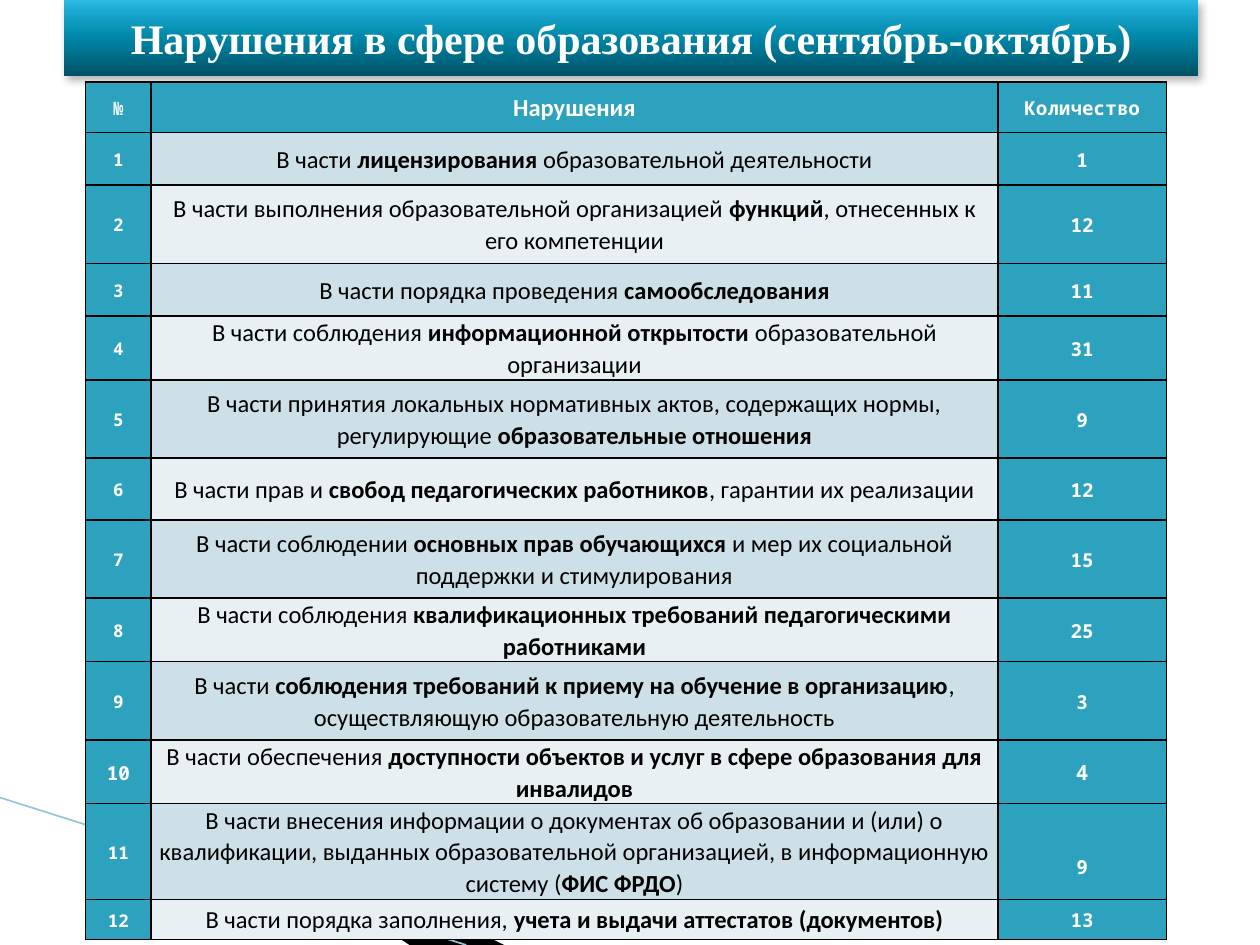
"""Build a slide with a table of violations in education for September and October."""
from lxml.etree import SubElement
from pptx import Presentation
from pptx.dml.color import RGBColor
from pptx.enum.shapes import MSO_CONNECTOR
from pptx.enum.text import MSO_ANCHOR, MSO_AUTO_SIZE, PP_ALIGN
from pptx.oxml.ns import qn
from pptx.util import Inches, Pt

TITLE = "Нарушения в сфере образования (сентябрь-октябрь)"
HEADERS = ["№", "Нарушения", "Количество"]
VIOLATIONS = [
    ("В части *лицензирования* образовательной деятельности", 1, 0.42),
    ("В части выполнения образовательной организацией *функций*, отнесенных к его компетенции", 12, 0.62),
    ("В части порядка проведения *самообследования*", 11, 0.42),
    ("В части соблюдения *информационной открытости *образовательной организации", 31, 0.5),
    ("В части принятия локальных нормативных актов, содержащих нормы, регулирующие "
     "*образовательные отношения*", 9, 0.62),
    ("В части прав и *свобод педагогических работников*, гарантии их реализации", 12, 0.49),
    ("В части соблюдении *основных прав обучающихся *и мер их социальной поддержки и стимулирования", 15, 0.62),
    ("В части соблюдения *квалификационных требований педагогическими работниками*", 25, 0.5),
    ("В части *соблюдения требований к приему на обучение в организацию*, "
     "осуществляющую образовательную деятельность", 3, 0.62),
    ("В части обеспечения *доступности объектов и услуг в сфере образования для инвалидов*", 4, 0.5),
    ("В части внесения информации о документах об образовании и (или) о квалификации, выданных "
     "образовательной организацией, в информационную систему (*ФИС ФРДО*)", 9, 0.76),
    ("В части порядка заполнения, *учета и выдачи аттестатов (документов)*", 13, 0.32),
]
HEADER_HEIGHT = 0.4
COLUMN_WIDTHS = [0.52, 6.72, 1.34]
NUMBER_SIZES = {10: 11}
COUNT_SIZES = {10: 12}
COUNT_TOP_MARGINS = {11: 0.23}
WAVES = [
    ([(0.55, 6.51), (5.95, 7.5), (4.56, 7.5), (0.55, 6.5)], "A0CBDC", 40),
    ([(0.53, 6.49), (4.57, 7.5), (3.72, 7.5), (0.54, 6.5)], "000000", 100),
]
THEME = {
    "title_font": "Times New Roman", "body_font": "Calibri", "mono_font": "Noto Sans Mono",
    "title_size": 24, "body_size": 14, "count_size": 11, "number_size": 10, "sign_size": 10.5,
    "white": "FFFFFF", "black": "000000", "accent": "2DA2BF", "bands": ["CDE0E8", "E8F0F4"],
    "wave_line": "97C5D8",
    "title_gradient": [(0, "005367"), (50, "0086A7"), (70, "0E9ABE"), (100, "2CB9E3")],
}


def add_color(parent, color, alpha=100):
    element = SubElement(parent, qn("a:srgbClr"), val=color)
    if alpha < 100:
        SubElement(element, qn("a:alpha"), val=str(alpha * 1000))


def write_text(frame, text, *, font, size, color, bold=True, spacing=None):
    """Write one centred paragraph, where asterisks enclose bold words."""
    paragraph = frame.paragraphs[0]
    paragraph.alignment = PP_ALIGN.CENTER
    if spacing:
        paragraph.line_spacing = spacing
    for index, part in enumerate(text.split("*")):
        if part:
            run = paragraph.add_run()
            run.text = part
            run.font.name = font
            run.font.size = Pt(size)
            run.font.bold = bold or index % 2 == 1
            run.font.color.rgb = RGBColor.from_string(color)


def add_waves(slide):
    for points, color, alpha in WAVES:
        builder = slide.shapes.build_freeform(*points[0], scale=Inches(1))
        builder.add_line_segments(points[1:], close=True)
        wave = builder.convert_to_shape()
        wave.shadow.inherit = False
        wave.line.fill.background()
        wave.fill.solid()
        wave.fill.fore_color.rgb = RGBColor.from_string(color)
        if alpha < 100:
            color_element = wave.fill._xPr.find(".//" + qn("a:srgbClr"))
            SubElement(color_element, qn("a:alpha"), val=str(alpha * 1000))
    line = slide.shapes.add_connector(
        MSO_CONNECTOR.STRAIGHT, Inches(0), Inches(6.33), Inches(3.7), Inches(7.5))
    line.line.color.rgb = RGBColor.from_string(THEME["wave_line"])
    line.line.width = Pt(0.95)
    SubElement(line._element.spPr, qn("a:effectLst"))


def add_title(slide):
    title = slide.shapes.title
    title.left, title.top, title.width, title.height = map(Inches, (0.51, 0, 9, 0.6))
    properties = title._element.spPr
    gradient = SubElement(properties, qn("a:gradFill"), rotWithShape="1")
    stops = SubElement(gradient, qn("a:gsLst"))
    for position, color in THEME["title_gradient"]:
        add_color(SubElement(stops, qn("a:gs"), pos=str(position * 1000)), color)
    SubElement(gradient, qn("a:lin"), ang=str(270 * 60000), scaled="0")
    effects = SubElement(properties, qn("a:effectLst"))
    shadow = SubElement(effects, qn("a:outerShdw"), blurRad=str(Pt(4.5)), dist=str(Pt(2.6)),
                        dir=str(53 * 60000), algn="tl", rotWithShape="0")
    add_color(shadow, THEME["black"], 30)
    frame = title.text_frame
    frame.word_wrap = True
    frame.auto_size = MSO_AUTO_SIZE.NONE
    frame.vertical_anchor = MSO_ANCHOR.MIDDLE
    write_text(frame, TITLE, font=THEME["title_font"], size=THEME["title_size"], color=THEME["white"])


def fill_cell(cell, text, *, fill, top_margin=0, **text_format):
    cell.vertical_anchor = MSO_ANCHOR.MIDDLE
    cell.margin_left = cell.margin_right = Inches(0.04)
    cell.margin_top, cell.margin_bottom = Inches(top_margin), 0
    write_text(cell.text_frame, text, spacing=1.07, **text_format)
    properties = cell._tc.get_or_add_tcPr()
    for side in ("lnL", "lnR", "lnT", "lnB"):
        border = SubElement(properties, qn("a:" + side), w=str(Pt(1)))
        add_color(SubElement(border, qn("a:solidFill")), THEME["black"])
    cell.fill.solid()
    cell.fill.fore_color.rgb = RGBColor.from_string(fill)


def add_violations_table(slide):
    heights = [HEADER_HEIGHT] + [height for _, _, height in VIOLATIONS]
    table = slide.shapes.add_table(
        len(heights), len(COLUMN_WIDTHS), Inches(0.68), Inches(0.65),
        Inches(sum(COLUMN_WIDTHS)), Inches(sum(heights))).table
    for column, width in zip(table.columns, COLUMN_WIDTHS):
        column.width = Inches(width)
    for row, height in zip(table.rows, heights):
        row.height = Inches(height)

    mono = {"font": THEME["mono_font"], "color": THEME["white"], "fill": THEME["accent"]}
    header_formats = [
        {**mono, "size": THEME["sign_size"]},
        {**mono, "size": THEME["body_size"], "font": THEME["body_font"]},
        {**mono, "size": THEME["count_size"]},
    ]
    for column, (header, header_format) in enumerate(zip(HEADERS, header_formats)):
        fill_cell(table.cell(0, column), header, **header_format)
    for number, (violation, count, _) in enumerate(VIOLATIONS, start=1):
        fill_cell(table.cell(number, 0), str(number),
                  size=NUMBER_SIZES.get(number, THEME["number_size"]), **mono)
        fill_cell(table.cell(number, 1), violation, font=THEME["body_font"], size=THEME["body_size"],
                  color=THEME["black"], bold=False, fill=THEME["bands"][(number - 1) % 2])
        fill_cell(table.cell(number, 2), str(count), size=COUNT_SIZES.get(number, THEME["count_size"]),
                  top_margin=COUNT_TOP_MARGINS.get(number, 0), **mono)


def main():
    presentation = Presentation()
    presentation.slide_width, presentation.slide_height = Inches(10), Inches(7.5)
    slide = presentation.slides.add_slide(presentation.slide_layouts[5])
    add_waves(slide)
    add_title(slide)
    add_violations_table(slide)
    presentation.save("out.pptx")


if __name__ == "__main__":
    main()
